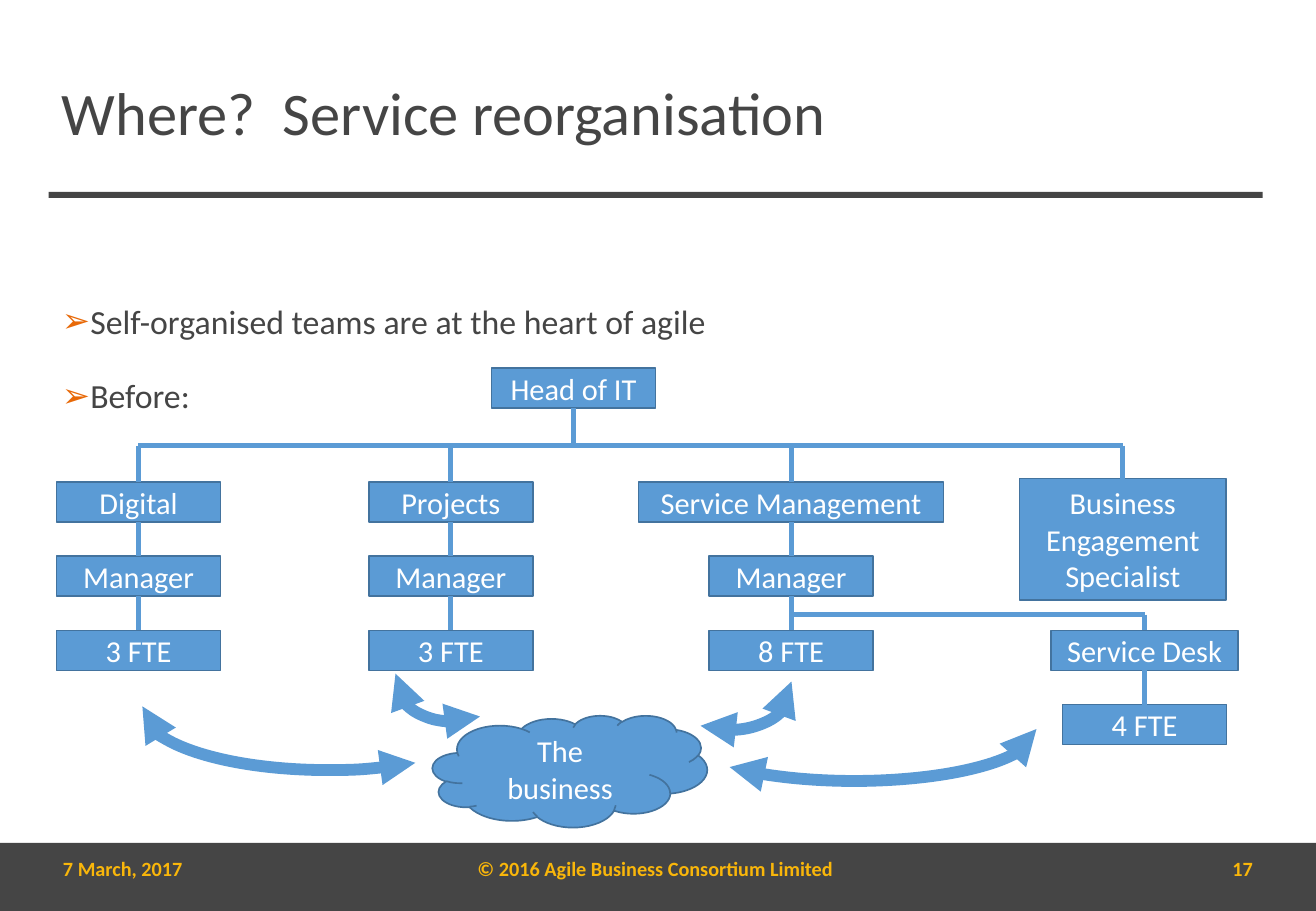
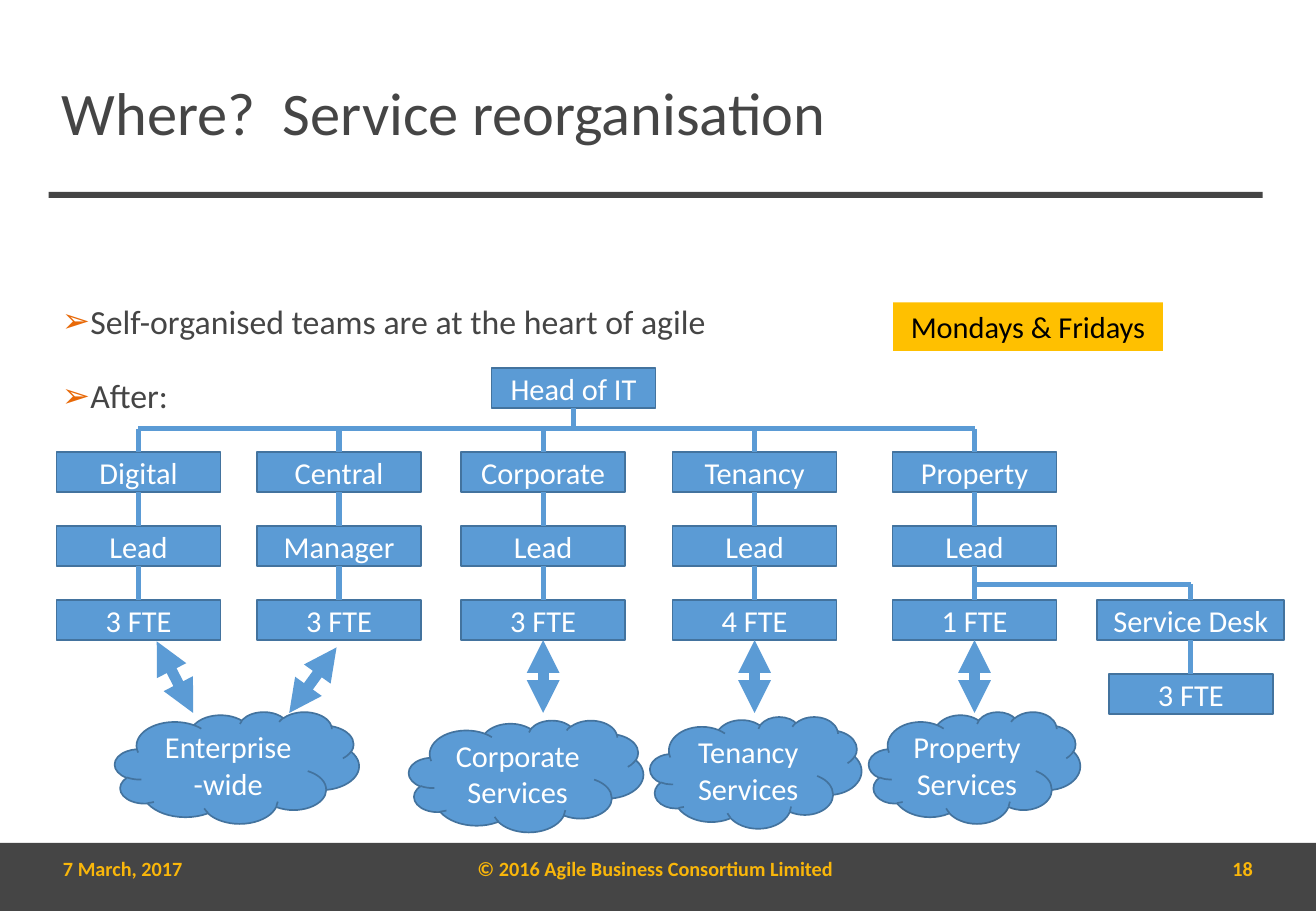
from pptx import Presentation
from pptx.dml.color import RGBColor
from pptx.enum.shapes import MSO_CONNECTOR, MSO_SHAPE
from pptx.enum.text import MSO_ANCHOR, MSO_AUTO_SIZE, PP_ALIGN
from pptx.oxml.ns import qn
from pptx.oxml.xmlchemy import OxmlElement
from pptx.util import Inches, Pt

RECTANGLE, CLOUD, ARC = MSO_SHAPE.RECTANGLE, MSO_SHAPE.CLOUD, MSO_SHAPE.ARC
STRAIGHT = MSO_CONNECTOR.STRAIGHT
MIDDLE, TOP = MSO_ANCHOR.MIDDLE, MSO_ANCHOR.TOP
LEFT, CENTER, RIGHT = PP_ALIGN.LEFT, PP_ALIGN.CENTER, PP_ALIGN.RIGHT
NO_AUTOFIT = MSO_AUTO_SIZE.NONE
TOP_SITE, BOTTOM_SITE = 0, 2

FONT = "Calibri"
GREY, BLUE, EDGE, WHITE = "454545", "5B9BD5", "43739E", "FFFFFF"
GOLD, ORANGE, YELLOW, BLACK = "F9B60A", "E86908", "FFC000", "000000"

WIDTH, HEIGHT = 10.83, 7.5
MARGIN = 0.41
BAND_TOP = 6.94
BOX_WIDTH, BOX_HEIGHT = 1.35, 0.33
DESK_WIDTH = 1.54
ROW_PITCH = 0.61
HEAD_CENTRE, HEAD_TOP = 4.72, 3.03
CLOUD_HEIGHT = 0.92


def color(hex_string):
    return RGBColor.from_string(hex_string)


def inches(*lengths):
    return [Inches(length) for length in lengths]


def add_run(paragraph, text, size, hex_string, bold=False):
    run = paragraph.add_run()
    run.text = text
    run.font.name = FONT
    run.font.size = Pt(size)
    run.font.bold = bold
    run.font.color.rgb = color(hex_string)


def write(shape, lines, size, hex_string, align=CENTER, anchor=MIDDLE, bold=False):
    """Fill a shape with one paragraph per line and return the paragraphs."""
    frame = shape.text_frame
    frame.word_wrap = True
    frame.auto_size = NO_AUTOFIT
    frame.vertical_anchor = anchor
    paragraphs = [frame.paragraphs[0]] + [frame.add_paragraph() for _ in lines[1:]]
    for paragraph, line in zip(paragraphs, lines):
        paragraph.alignment = align
        add_run(paragraph, line, size, hex_string, bold)
    return paragraphs


def add_bullet(paragraph):
    properties = paragraph._p.get_or_add_pPr()
    properties.set("marL", str(Inches(0.2)))
    properties.set("indent", str(Inches(-0.2)))
    bullet_color = OxmlElement("a:buClr")
    value = OxmlElement("a:srgbClr")
    value.set("val", ORANGE)
    bullet_color.append(value)
    bullet = OxmlElement("a:buChar")
    bullet.set("char", "➢")
    properties.extend([bullet_color, bullet])


def add_filled(slide, kind, area, fill, edge=None, edge_width=1):
    shape = slide.shapes.add_shape(kind, *inches(*area))
    shape.shadow.inherit = False
    shape.fill.solid()
    shape.fill.fore_color.rgb = color(fill)
    if edge:
        shape.line.color.rgb = color(edge)
        shape.line.width = Pt(edge_width)
    else:
        shape.line.fill.background()
    return shape


def add_node(slide, text, centre, top, width=BOX_WIDTH, height=BOX_HEIGHT, kind=RECTANGLE):
    area = (centre - width / 2, top, width, height)
    node = add_filled(slide, kind, area, BLUE, EDGE)
    write(node, text.split("\n"), 18, WHITE)
    return node


def add_cloud(slide, text, centre, top, width):
    add_node(slide, text, centre, top, width, CLOUD_HEIGHT, CLOUD)


def add_arrowheads(shape):
    line = shape.line._get_or_add_ln()
    for tag in ("a:headEnd", "a:tailEnd"):
        end = OxmlElement(tag)
        end.set("type", "triangle")
        line.append(end)


def add_line(slide, start, finish, width=3, above=None, below=None):
    """Draw a line, joined to the node above it or below it when given."""
    line = slide.shapes.add_connector(STRAIGHT, *inches(*start, *finish))
    line.line.color.rgb = color(BLUE)
    line.line.width = Pt(width)
    line.element.spPr.append(OxmlElement("a:effectLst"))
    if above is not None:
        line.begin_connect(above, BOTTOM_SITE)
    if below is not None:
        line.end_connect(below, TOP_SITE)
    return line


def add_arrow(slide, start, finish, above=None):
    add_arrowheads(add_line(slide, start, finish, 6.5, above))


def add_arc_arrow(slide, area, angles, mirrored):
    arc = slide.shapes.add_shape(ARC, *inches(*area))
    arc.shadow.inherit = False
    arc.fill.background()
    arc.line.color.rgb = color(BLUE)
    arc.line.width = Pt(7)
    arc.adjustments[0], arc.adjustments[1] = angles
    transform = arc.element.spPr.find(qn("a:xfrm"))
    transform.set("flipV", "1")
    if mirrored:
        transform.set("flipH", "1")
    add_arrowheads(arc)


def add_stack(slide, names, centre, top, widths=()):
    """Stack nodes one row apart, each joined to the one above it."""
    nodes = []
    for row, name in enumerate(names):
        width = widths[row] if row < len(widths) else BOX_WIDTH
        node = add_node(slide, name, centre, top + row * ROW_PITCH, width)
        if nodes:
            add_line(slide, (centre, top), (centre, top), above=nodes[-1], below=node)
        nodes.append(node)
    return nodes


def add_drop(slide, centre, bar, node):
    add_line(slide, (centre, bar), (centre, bar), below=node)


def add_head(slide, bar, first, last):
    head = add_node(slide, "Head of IT", HEAD_CENTRE, HEAD_TOP)
    add_line(slide, (HEAD_CENTRE, bar), (HEAD_CENTRE, bar), above=head)
    add_line(slide, (first, bar), (last, bar))


def add_service_desk(slide, staff, trunk, centre, top):
    """Branch a service desk off the line at the trunk."""
    bar = top - 0.13
    nodes = add_stack(slide, ["Service Desk", staff], centre, top, [DESK_WIDTH])
    add_line(slide, (trunk, bar), (centre, bar))
    add_drop(slide, centre, bar, nodes[0])


def add_footer(slide, number):
    parts = [
        ("7 March, 2017", 0.42, 2.53, LEFT),
        ("© 2016 Agile Business Consortium Limited", 3.68, 3.43, CENTER),
        (number, 7.88, 2.53, RIGHT),
    ]
    for text, left, width, align in parts:
        box = slide.shapes.add_textbox(*inches(left, BAND_TOP + 0.01, width, 0.4))
        write(box, [text], 12, GOLD, align, bold=True)


def place_layout(layout):
    title, body = layout.placeholders[0], layout.placeholders[1]
    for placeholder, area in (
        (title, (MARGIN, 0.4, 7.87, 1.11)),
        (body, (MARGIN, 2.26, 9.26, 4.54)),
    ):
        placeholder.left, placeholder.top, placeholder.width, placeholder.height = inches(*area)


def move_bands_to_master(presentation, slide):
    bands = [
        add_filled(slide, RECTANGLE, (0, BAND_TOP, WIDTH, HEIGHT - BAND_TOP), GREY, GREY, 0.5),
        add_filled(slide, RECTANGLE, (0.4, 1.58, 9.99, 0.05), GREY),
    ]
    for number, band in enumerate(bands, 100):
        band.element.nvSpPr.cNvPr.set("id", str(number))
        presentation.slide_master.shapes.element.append(band.element)


def add_content_slide(presentation, stage, number):
    slide = presentation.slides.add_slide(presentation.slide_layouts[1])
    title, body = slide.shapes.title, slide.placeholders[1]
    heading = write(title, ["Where?  Service reorganisation"], 35.8, GREY, LEFT)[0]
    heading.line_spacing = 0.9
    points = ["Self-organised teams are at the heart of agile", stage]
    for index, paragraph in enumerate(write(body, points, 20, GREY, LEFT, TOP)):
        add_bullet(paragraph)
        paragraph.line_spacing = 1.5
        paragraph.space_before = Pt(8.1 if index else 0)
    add_footer(slide, number)
    return slide


def draw_before(slide):
    bar, top = 3.67, 3.97
    teams = [
        (1.14, ["Digital", "Manager", "3 FTE"], []),
        (3.71, ["Projects", "Manager", "3 FTE"], []),
        (6.51, ["Service Management", "Manager", "8 FTE"], [2.51]),
    ]
    specialist_centre = 9.24
    add_head(slide, bar, teams[0][0], specialist_centre)
    for centre, names, widths in teams:
        add_drop(slide, centre, bar, add_stack(slide, names, centre, top, widths)[0])
    specialist = add_node(slide, "Business Engagement\nSpecialist",
                          specialist_centre, 3.94, 1.7, 1)
    add_drop(slide, specialist_centre, bar, specialist)
    add_service_desk(slide, "4 FTE", teams[-1][0], 9.42, top + 2 * ROW_PITCH)

    add_cloud(slide, "The business", 4.69, 5.89, 2.26)
    for area, angles, mirrored in [
        ((1.17, 5.34, 3.05, 1), (126.81, 0.55), True),
        ((3.25, 5.25, 0.95, 0.69), (140.08, 3.56), True),
        ((5.47, 5.32, 1.05, 0.69), (140.08, 3.56), False),
        ((5.53, 5.58, 3, 0.85), (118.11, 0.06), False),
    ]:
        add_arc_arrow(slide, area, angles, mirrored)


def draw_after(slide):
    bar, top, arrow_end = 3.53, 3.72, 5.87
    teams = [
        (1.14, ["Digital", "Lead", "3 FTE"]),
        (2.79, ["Central", "Manager", "3 FTE"]),
        (4.47, ["Corporate", "Lead", "3 FTE"]),
        (6.21, ["Tenancy", "Lead", "4 FTE"]),
        (8.02, ["Property", "Lead", "1 FTE"]),
    ]
    add_head(slide, bar, teams[0][0], teams[-1][0])
    staff = []
    for centre, names in teams:
        nodes = add_stack(slide, names, centre, top)
        add_drop(slide, centre, bar, nodes[0])
        staff.append((centre, nodes[-1]))
    add_service_desk(slide, "3 FTE", teams[-1][0], 9.8, top + 2 * ROW_PITCH)

    for text, centre, cloud_top, width in [
        ("Tenancy Services", 6.22, 5.9, 1.74),
        ("Property Services", 8.02, 5.86, 1.74),
        ("Corporate Services", 4.33, 5.93, 1.93),
        ("Enterprise-wide", 1.95, 5.86, 2.01),
    ]:
        add_cloud(slide, text, centre, cloud_top, width)
    for centre, node in staff[2:]:
        add_arrow(slide, (centre, arrow_end), (centre, arrow_end), node)
    add_arrow(slide, (1.29, 5.28), (1.59, arrow_end))
    add_arrow(slide, (2.77, 5.33), (2.38, arrow_end))

    label = add_filled(slide, RECTANGLE, (7.35, 2.49, 2.22, 0.4), YELLOW)
    write(label, ["Mondays & Fridays"], 18, BLACK, anchor=TOP)


def main():
    presentation = Presentation()
    presentation.slide_width, presentation.slide_height = inches(WIDTH, HEIGHT)
    place_layout(presentation.slide_layouts[1])
    before = add_content_slide(presentation, "Before:", "17")
    after = add_content_slide(presentation, "After:", "18")
    move_bands_to_master(presentation, before)
    draw_before(before)
    draw_after(after)
    presentation.save("out.pptx")


if __name__ == "__main__":
    main()
